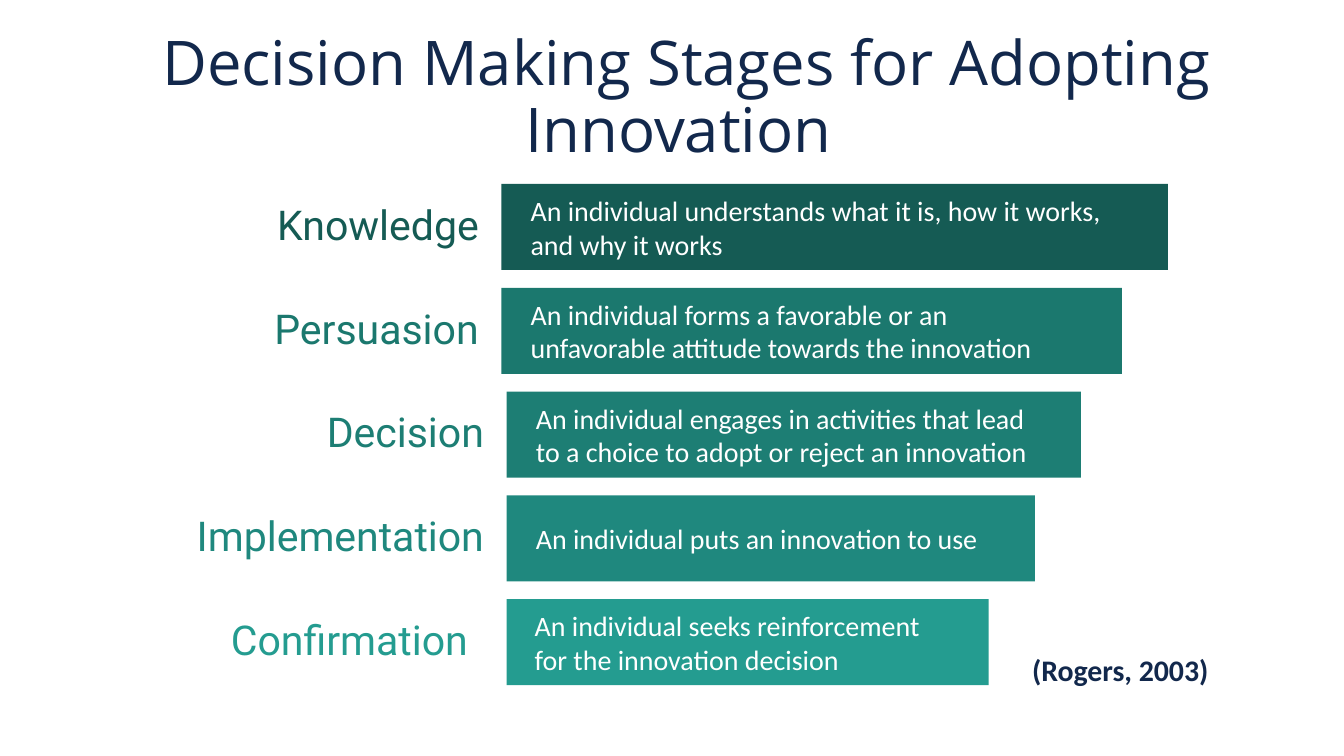
import pptx
import pptx.util
import pptx.dml.color
import pptx.enum.shapes
import pptx.enum.text
from dataclasses import dataclass

Pt = pptx.util.Pt
Align = pptx.enum.text.PP_ALIGN
Anchor = pptx.enum.text.MSO_ANCHOR


@dataclass(frozen=True)
class Theme:
    navy: str = "12284C"
    white: str = "FFFFFF"
    title_font: str = "Open Sans"
    label_font: str = "Roboto"
    body_font: str = "Calibri"
    title_size: int = 33
    label_size: int = 22
    body_size: int = 15
    citation_size: int = 16


@dataclass(frozen=True)
class Stage:
    name: str
    description: str
    color: str
    bar_left: float
    label_width: float
    text_width: float
    text_height: float = 20.9
    text_indent: float = 8.6
    label_align: Align = Align.RIGHT


THEME = Theme()

# Vertical rhythm and the steady narrowing of the bars
FIRST_BAR_TOP, ROW_PITCH, BAR_HEIGHT = 98.6, 55.6, 46.1
FIRST_BAR_WIDTH, WIDTH_STEP = 357.1, 24.7
LABEL_HEIGHT, LABEL_GAP = 39.6, 5

STAGES = [
    Stage("Knowledge",
          "An individual understands what it is, how it works, and why it works",
          "155B54", 268.6, 155.5, 326.2, text_height=36),
    Stage("Persuasion",
          "An individual forms a favorable or an unfavorable attitude towards the innovation",
          "1B786E", 268.6, 148.3, 299.5),
    Stage("Decision",
          "An individual engages in activities that lead to a choice to adopt or reject an innovation",
          "1D7E74", 271.4, 144, 281.5),
    Stage("Implementation", "An individual puts an innovation to use",
          "1F887E", 271.4, 180, 263.5),
    Stage("Confirmation",
          "An individual seeks reinforcement for the innovation decision",
          "249C90", 271.4, 158.4, 239.8, text_indent=8, label_align=Align.CENTER),
]


def rgb(color):
    return pptx.dml.color.RGBColor.from_string(color)


def write(shape, text, *, font, size, color, align=Align.LEFT, bold=False,
          anchor=Anchor.MIDDLE, line_spacing=1.0, insets=(7.2, 3.6, 7.2, 3.6)):
    frame = shape.text_frame
    frame.word_wrap = True
    frame.auto_size = pptx.enum.text.MSO_AUTO_SIZE.NONE
    frame.vertical_anchor = anchor
    (frame.margin_left, frame.margin_top,
     frame.margin_right, frame.margin_bottom) = map(Pt, insets)
    paragraph = frame.paragraphs[0]
    paragraph.alignment = align
    paragraph.line_spacing = line_spacing
    paragraph.space_before = Pt(0)
    run = paragraph.add_run()
    run.text = text
    run.font.name = font
    run.font.size = Pt(size)
    run.font.bold = bold
    run.font.color.rgb = rgb(color)


def add_text(slide, text, left, top, width, height, **text_format):
    box = slide.shapes.add_textbox(Pt(left), Pt(top), Pt(width), Pt(height))
    write(box, text, **text_format)


def add_bar(slide, left, top, width, color):
    bar = slide.shapes.add_shape(
        pptx.enum.shapes.MSO_SHAPE.RECTANGLE,
        Pt(left), Pt(top), Pt(width), Pt(BAR_HEIGHT))
    bar.shadow.inherit = False
    bar.fill.solid()
    bar.fill.fore_color.rgb = rgb(color)
    bar.line.fill.background()


def add_title(slide, text):
    title = slide.shapes.title
    title.left, title.top, title.width, title.height = map(Pt, (48.2, 42.5, 617.8, 46.1))
    write(title, text, font=THEME.title_font, size=THEME.title_size,
          color=THEME.navy, align=Align.CENTER, anchor=Anchor.BOTTOM,
          line_spacing=0.9, insets=(28.8, 7.2, 7.2, 0))


def add_stage(slide, row, stage):
    top = FIRST_BAR_TOP + row * ROW_PITCH
    middle = top + BAR_HEIGHT / 2
    add_text(slide, stage.name,
             stage.bar_left - LABEL_GAP - stage.label_width,
             middle - LABEL_HEIGHT / 2, stage.label_width, LABEL_HEIGHT,
             font=THEME.label_font, size=THEME.label_size, color=stage.color,
             align=stage.label_align, line_spacing=0.9)
    add_bar(slide, stage.bar_left, top, FIRST_BAR_WIDTH - row * WIDTH_STEP, stage.color)
    add_text(slide, stage.description, stage.bar_left + stage.text_indent,
             middle - stage.text_height / 2, stage.text_width, stage.text_height,
             font=THEME.body_font, size=THEME.body_size, color=THEME.white)


def main():
    deck = pptx.Presentation()
    deck.slide_width, deck.slide_height = Pt(720), Pt(405)
    slide = deck.slides.add_slide(deck.slide_layouts[5])

    # Heading
    add_title(slide, "Decision Making Stages for Adopting Innovation ")

    # One labelled bar per stage
    for row, stage in enumerate(STAGES):
        add_stage(slide, row, stage)

    # Citation
    add_text(slide, "(Rogers, 2003)", 545.8, 345.6, 137.5, 20.2,
             font=THEME.body_font, size=THEME.citation_size, color=THEME.navy,
             bold=True, anchor=Anchor.TOP)

    deck.save("out.pptx")


if __name__ == "__main__":
    main()
